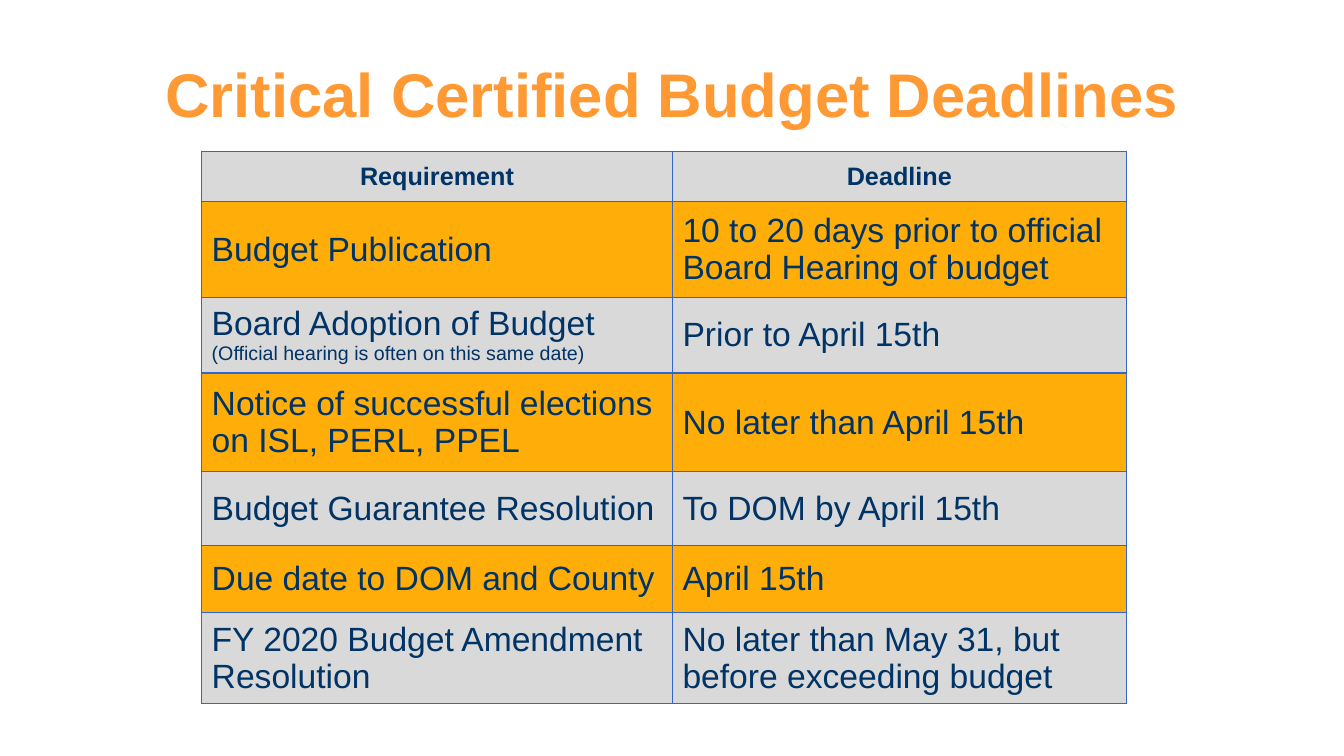
"""Build the slide of certified budget deadlines."""
from lxml.etree import SubElement
from pptx import Presentation
from pptx.dml.color import RGBColor
from pptx.enum.text import MSO_ANCHOR as Anchor, PP_ALIGN as Align
from pptx.oxml.ns import qn
from pptx.util import Inches, Pt

NAVY, ORANGE, AMBER, GREY, BLUE = "003366", "FF9933", "FFAD09", "D9D9D9", "3366CC"
COLUMN_WIDTHS = [4.67, 4.5]
ROW_HEIGHTS = [0.5, 0.95, 0.75, 0.98, 0.73, 0.67, 0.9]
DEADLINES = [
    ("Requirement", "Deadline"),
    ("Budget Publication", "10 to 20 days prior to official Board Hearing of budget"),
    ("Board Adoption of Budget\n(Official hearing is often on this same date)",
     "Prior to April 15th"),
    ("Notice of successful elections on ISL, PERL, PPEL", "No later than April 15th"),
    ("Budget Guarantee Resolution", "To DOM by April 15th"),
    ("Due date to DOM and County", "April 15th"),
    ("FY 2020 Budget Amendment Resolution",
     "No later than May 31, but before exceeding budget"),
]


def rgb(value):
    """Turn a hex string into a colour."""
    return RGBColor.from_string(value)


class DeadlineSlide:
    """Hold the font and the current slide."""

    def __init__(self, slide, font="Arial"):
        """Keep the slide and the font name."""
        self.slide = slide
        self.font = font

    def style(self, paragraph, size, color, bold=False, align=Align.LEFT):
        """Format a paragraph and its runs."""
        paragraph.alignment = align
        for run in paragraph.runs:
            run.font.name = self.font
            run.font.size = Pt(size)
            run.font.bold = bold
            run.font.color.rgb = rgb(color)

    def title(self, text, left, top, width, height):
        """Add the centred heading."""
        heading = self.slide.shapes.add_textbox(
            Inches(left), Inches(top), Inches(width), Inches(height)).text_frame
        heading.word_wrap = True
        heading.vertical_anchor = Anchor.MIDDLE
        heading.text = text
        self.style(heading.paragraphs[0], 44, ORANGE, True, Align.CENTER)

    def borders(self, cell, color, width):
        """Draw a line on all four sides of a cell."""
        properties = cell._tc.get_or_add_tcPr()
        for position, side in enumerate(("a:lnL", "a:lnR", "a:lnT", "a:lnB")):
            line = SubElement(properties, qn(side), w=str(Pt(width)))
            fill = SubElement(line, qn("a:solidFill"))
            SubElement(fill, qn("a:srgbClr"), val=color)
            properties.insert(position, line)

    def table(self, rows, left, top, widths, heights):
        """Add the table with a heading row and alternating fills."""
        deadlines = self.slide.shapes.add_table(
            len(rows), len(widths), Inches(left), Inches(top),
            Inches(sum(widths)), Inches(sum(heights))).table
        deadlines.first_row = deadlines.horz_banding = False
        for column, width in zip(deadlines.columns, widths):
            column.width = Inches(width)
        for index, (row, height, texts) in enumerate(zip(deadlines.rows, heights, rows)):
            row.height = Inches(height)
            for cell, text in zip(row.cells, texts):
                self.cell(cell, text, AMBER if index % 2 else GREY, index == 0)

    def cell(self, cell, text, fill, heading):
        """Fill one cell; lines after the first are small notes."""
        cell.text_frame.text = text
        cell.vertical_anchor = Anchor.MIDDLE
        cell.fill.solid()
        cell.fill.fore_color.rgb = rgb(fill)
        self.borders(cell, BLUE, 1)
        main, *notes = cell.text_frame.paragraphs
        if heading:
            self.style(main, 18, NAVY, True, Align.CENTER)
        else:
            self.style(main, 24, NAVY)
        for note in notes:
            self.style(note, 14, NAVY)


def main():
    """Build and save the presentation."""
    presentation = Presentation()
    presentation.slide_width = Inches(13.33)
    presentation.slide_height = Inches(7.5)
    page = DeadlineSlide(presentation.slides.add_slide(presentation.slide_layouts[6]))
    page.title("Critical Certified Budget Deadlines", 0.67, 0.3, 12, 1.25)
    page.table(DEADLINES, 2, 1.5, COLUMN_WIDTHS, ROW_HEIGHTS)
    presentation.save("out.pptx")


if __name__ == "__main__":
    main()
